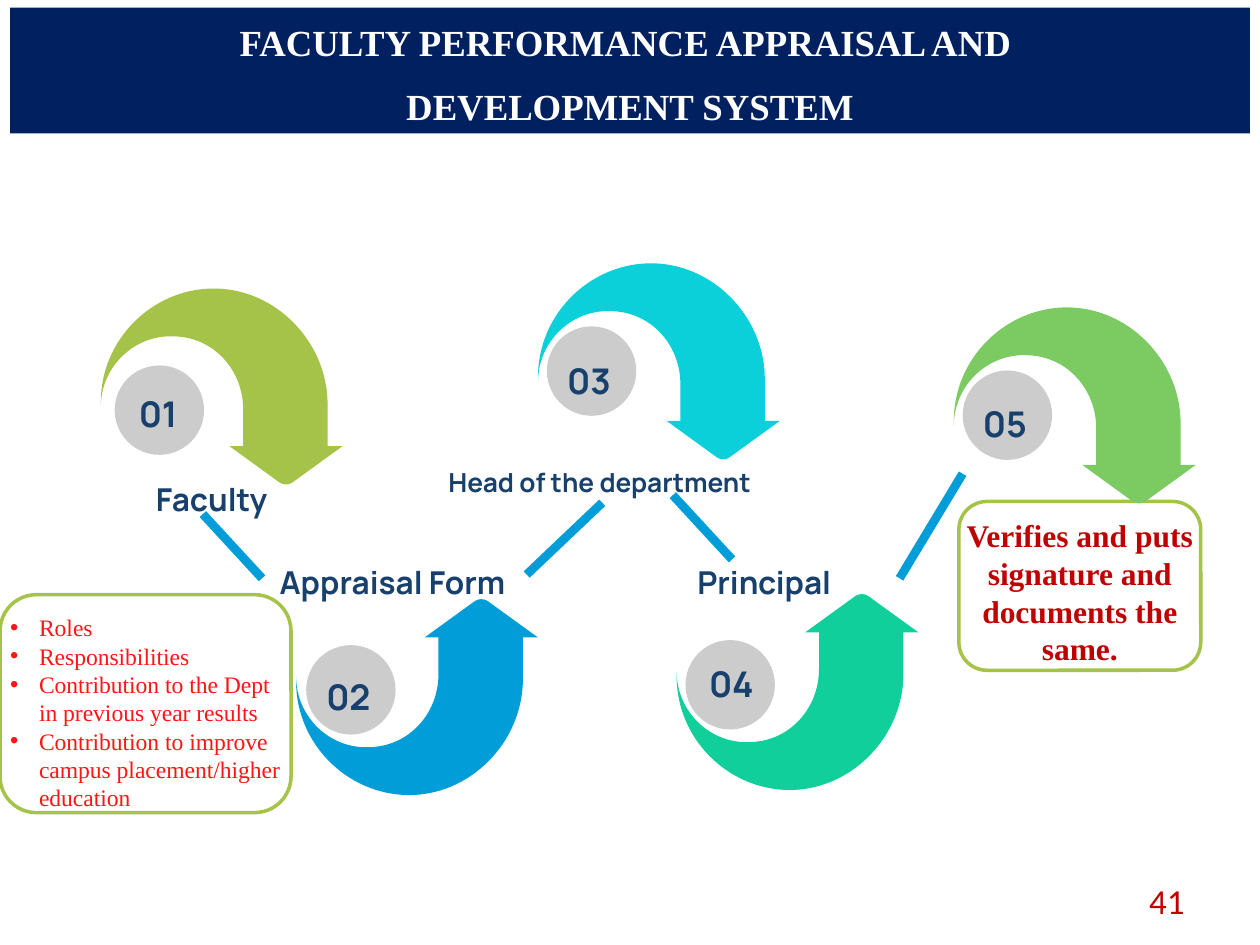
from lxml import etree
from pptx import Presentation
from pptx.dml.color import RGBColor
from pptx.enum.shapes import MSO_CONNECTOR, MSO_SHAPE
from pptx.enum.text import MSO_ANCHOR, MSO_AUTO_SIZE, PP_ALIGN
from pptx.oxml.ns import qn
from pptx.util import Inches, Pt

CENTER, RIGHT, LEFT = PP_ALIGN.CENTER, PP_ALIGN.RIGHT, PP_ALIGN.LEFT
MIDDLE = MSO_ANCHOR.MIDDLE
NO_AUTOFIT = MSO_AUTO_SIZE.NONE
CARD, CIRCLE = MSO_SHAPE.FLOWCHART_ALTERNATE_PROCESS, MSO_SHAPE.OVAL
STRAIGHT = MSO_CONNECTOR.STRAIGHT

COLORS = {
    "navy": "002060", "white": "FFFFFF", "ink": "17406D", "grey": "CCCCCC",
    "olive": "A5C249", "blue": "009DD9", "cyan": "0BD0D9", "teal": "10CF9B",
    "green": "7CCA62", "red": "C00000", "bright red": "FF1515",
}
SERIF, SANS = "Times New Roman", "Manrope"
ARROW_HEIGHT, DISC, NUMBER_BOX = 1.55, 0.71, (0.57, 0.44)

# Hooked arrow pointing down: one point is a corner, three are a Bezier curve
HOOK = [
    [(1.8, 1.25)], [(1.8, 0.92)],
    [(1.8, 0.42), (1.38, -0.01), (0.88, 0)], [(0.4, 0.01), (0, 0.41), (0, 0.9)],
    [(0, 0.94)],
    [(0, 0.62), (0.27, 0.36), (0.59, 0.38)], [(0.9, 0.39), (1.13, 0.65), (1.13, 0.96)],
    [(1.13, 1.25)], [(1.02, 1.25)], [(1.42, 1.54)],
    [(1.45, 1.56), (1.49, 1.56), (1.52, 1.54)], [(1.92, 1.25)], [(1.8, 1.25)],
]

# number, colour, arrow corner, points up, disc offset, number offset in disc
STEPS = [
    ("01", "olive", (0.8, 2.29), False, (0.11, 0.61), (0.06, 0.16)),
    ("02", "blue", (2.35, 4.76), True, (0.08, 0.36), (0.05, 0.19)),
    ("03", "cyan", (4.27, 2.09), False, (0.07, 0.5), (0.05, 0.21)),
    ("04", "teal", (5.37, 4.72), True, (0.07, 0.36), (0.08, 0.12)),
    ("05", "green", (7.57, 2.44), False, (0.07, 0.5), (0.05, 0.2)),
]
LABELS = [
    ("Faculty", (0.72, 3.76, 1.92, 0.4), 18),
    ("Appraisal Form", (1.94, 4.42, 2.35, 0.4), 18),
    ("Head of the department", (3.28, 3.65, 2.96, 0.35), 15),
    ("Principal", (5.34, 4.42, 1.45, 0.4), 18),
]
LINKS = [
    (2.08, 4.59, 1.61, 4.08), (4.18, 4.56, 4.78, 3.99),
    (5.81, 4.44, 5.34, 3.93), (7.14, 4.59, 7.64, 3.76),
]
CARDS = [(7.61, 3.98, 1.92, 1.34), (0, 4.72, 2.31, 1.73)]
# text, has a bullet
CRITERIA = [
    ("Roles", True), ("Responsibilities", True),
    ("Contribution to the Dept", True), ("in previous year results", False),
    ("Contribution to improve campus placement/higher education", True),
]


def rgb(name):
    return RGBColor.from_string(COLORS[name])


def place(shape, box):
    shape.left, shape.top, shape.width, shape.height = map(Inches, box)


def style(paragraph, size, font, color, bold=False, align=CENTER):
    paragraph.alignment = align
    paragraph.font.size = Pt(size)
    paragraph.font.name = font
    paragraph.font.bold = bold
    paragraph.font.color.rgb = rgb(color)


def paint(shape, fill, outline=None):
    shape.shadow.inherit = False
    shape.fill.solid()
    shape.fill.fore_color.rgb = rgb(fill)
    if outline:
        shape.line.color.rgb = rgb(outline)
        shape.line.width = Pt(2)
    else:
        shape.line.fill.background()


def add_label(slide, text, box, size, font=SANS, color="ink", bold=True, align=CENTER, inset=0):
    frame = slide.shapes.add_textbox(*map(Inches, box)).text_frame
    frame.word_wrap = True
    frame.vertical_anchor = MIDDLE
    frame.margin_left = frame.margin_right = Inches(inset)
    frame.margin_top = frame.margin_bottom = 0
    frame.text = text
    style(frame.paragraphs[0], size, font, color, bold, align)


def add_hook(slide, corner, up, color):
    left, top = corner
    segments = [[(Inches(left + x), Inches(top + (ARROW_HEIGHT - y if up else y)))
                 for x, y in segment] for segment in HOOK]
    ends = [segment[-1] for segment in segments]
    builder = slide.shapes.build_freeform(*ends[0])
    builder.add_line_segments(ends[1:], close=True)
    hook = builder.convert_to_shape()
    # Turn the straight segments that have control points into curves
    outline = next(hook._element.iter(qn("a:path")))
    for command, segment in zip(list(outline), segments):
        if len(segment) == 3:
            command.tag = qn("a:cubicBezTo")
            for i, (x, y) in enumerate(segment[:2]):
                control = etree.Element(qn("a:pt"), x=str(x - hook.left), y=str(y - hook.top))
                command.insert(i, control)
    paint(hook, color)


def add_step(slide, number, color, corner, up, disc_offset, number_offset):
    add_hook(slide, corner, up, color)
    x, y = (a + b for a, b in zip(corner, disc_offset))
    disc = slide.shapes.add_shape(CIRCLE, *map(Inches, (x, y, DISC, DISC)))
    paint(disc, "grey")
    dx, dy = number_offset
    add_label(slide, number, (x + dx, y + dy, *NUMBER_BOX), 20.2)


def add_link(slide, ends):
    link = slide.shapes.add_connector(STRAIGHT, *map(Inches, ends))
    link.line.color.rgb = rgb("blue")
    link.line.width = Pt(5)
    etree.SubElement(link._element.spPr, qn("a:effectLst"))


def fill_title(title):
    place(title, (0.08, 0.06, 9.84, 1))
    title.fill.solid()
    title.fill.fore_color.rgb = rgb("navy")
    frame = title.text_frame
    frame.auto_size = NO_AUTOFIT
    frame.vertical_anchor = MIDDLE
    frame.text = "FACULTY PERFORMANCE APPRAISAL AND \nDEVELOPMENT SYSTEM"
    for paragraph in frame.paragraphs:
        style(paragraph, 21, SERIF, "white", bold=True)
        paragraph.line_spacing = 1.15
        paragraph.space_after = Pt(7.5)


def fill_criteria(body):
    place(body, (-0.02, 4.81, 2.42, 1.69))
    frame = body.text_frame
    frame.auto_size = NO_AUTOFIT
    frame.vertical_anchor = MIDDLE
    frame.text = "\n".join(text for text, _ in CRITERIA)
    for paragraph, (_, bulleted) in zip(frame.paragraphs, CRITERIA):
        style(paragraph, 13.5, SERIF, "bright red", align=LEFT)
        paragraph.space_before = 0
        props = paragraph._p.get_or_add_pPr()
        props.set("marL", str(Inches(0.23)))
        props.set("indent", str(Inches(-0.23) if bulleted else 0))
        if bulleted:
            etree.SubElement(props, qn("a:buFont")).set("typeface", "Arial")
            etree.SubElement(props, qn("a:buChar")).set("char", "•")
        else:
            etree.SubElement(props, qn("a:buNone"))
        # Bullet settings come before the default run properties
        props.append(props.find(qn("a:defRPr")))


def main():
    deck = Presentation()
    deck.slide_width, deck.slide_height = Inches(10), Inches(7.5)
    slide = deck.slides.add_slide(deck.slide_layouts[1])
    body = slide.placeholders[1]

    # Title bar and cards
    fill_title(slide.shapes.title)
    for box in CARDS:
        paint(slide.shapes.add_shape(CARD, *map(Inches, box)), "white", "olive")

    # Numbered steps with their labels
    for step in STEPS:
        add_step(slide, *step)
    for label in LABELS:
        add_label(slide, *label)

    # Card texts, the list brought in front of its card
    add_label(slide, "Verifies and puts signature and documents the same.",
              (7.46, 4.04, 2.22, 1.31), 18, SERIF, "red", inset=0.1)
    fill_criteria(body)
    slide.shapes._spTree.append(body._element)

    # Links between steps and the page number
    for ends in LINKS:
        add_link(slide, ends)
    add_label(slide, "41", (7.17, 6.95, 2.33, 0.4), 20, "Calibri", "red", False, RIGHT, 0.1)

    deck.save("out.pptx")


if __name__ == "__main__":
    main()
